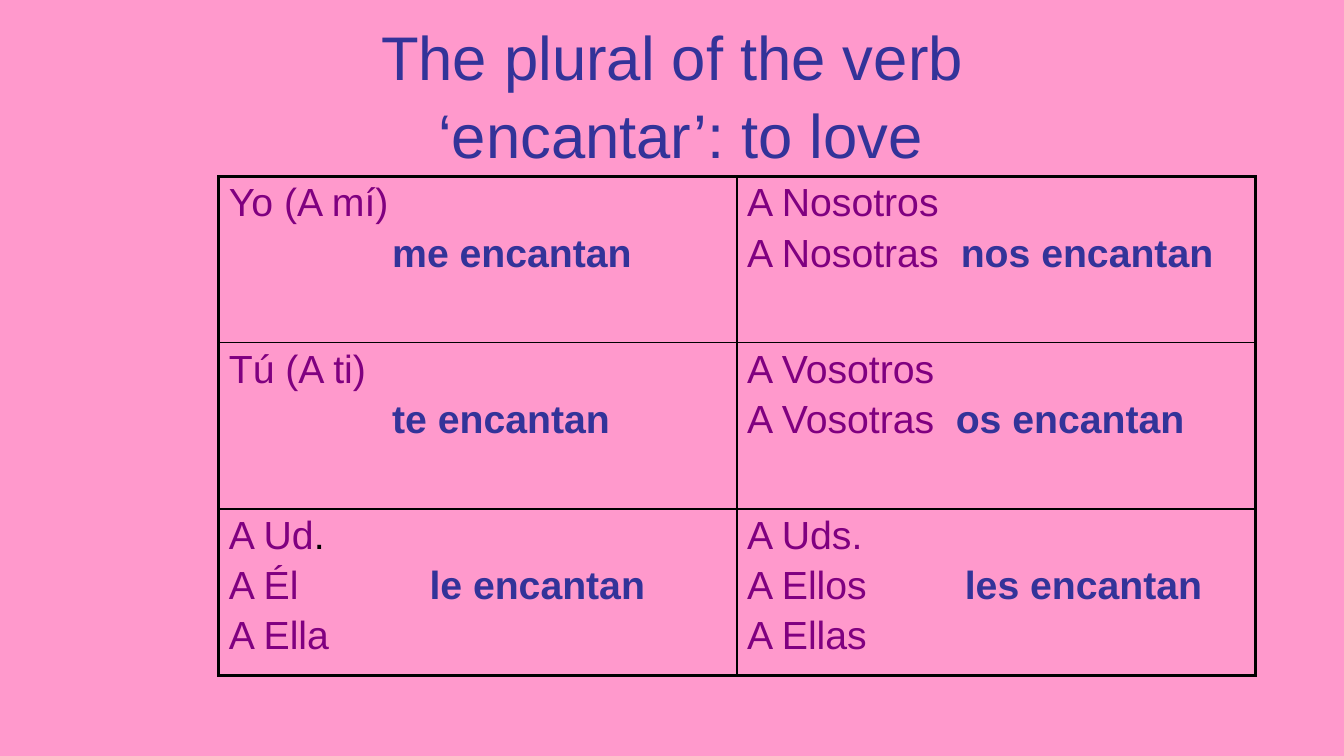
from pptx import Presentation, util as u
from pptx.dml.color import RGBColor
from pptx.enum import text
from pptx.oxml import ns, xmlchemy as x

PINK = RGBColor(0xFF, 0x99, 0xCC)
NAVY = RGBColor(0x33, 0x33, 0x99)
PURPLE = RGBColor(0x80, 0x00, 0x80)
BLACK = RGBColor(0x00, 0x00, 0x00)
OUTER, INNER = u.Pt(2.25), u.Pt(1)

# Each cell lists its lines; each line lists (text, colour, bold) runs.
# The number is the tab stop of the verb, in inches.
CELLS = [
    [(1.62, [[("Yo (A mí)", PURPLE, False)],
             [("\t", BLACK, False), ("me encantan", NAVY, True)]]),
     (2.12, [[("A Nosotros", PURPLE, False)],
             [("A Nosotras\t", PURPLE, False), ("nos encantan", NAVY, True)]])],
    [(1.62, [[("Tú (A ti)", PURPLE, False)],
             [("\t", BLACK, False), ("te encantan", NAVY, True)]]),
     (2.07, [[("A Vosotros", PURPLE, False)],
             [("A Vosotras\t", PURPLE, False), ("os encantan", NAVY, True)]])],
    [(1.99, [[("A Ud", PURPLE, False), (".", BLACK, False)],
             [("A Él\t", PURPLE, False), ("le encantan", NAVY, True)],
             [("A Ella", PURPLE, False)]]),
     (2.16, [[("A Uds.", PURPLE, False)],
             [("A Ellos\t", PURPLE, False), ("les encantan", NAVY, True)],
             [("A Ellas", PURPLE, False)]])],
]


def add_text(p, content, size=28, color=PURPLE, bold=False, font="Arial"):
    r = p.add_run()
    r.text = content
    r.font.name, r.font.size, r.font.bold = font, u.Pt(size), bold
    r.font.color.rgb = color


def add_element(parent, tag, **attributes):
    element = x.OxmlElement(tag)
    for name, value in attributes.items():
        element.set(name, str(value))
    parent.append(element)
    return element


class SlideBuilder:
    def __init__(self, prs):
        self.s = prs.slides.add_slide(prs.slide_layouts[5])
        self.s.background.fill.solid()
        self.s.background.fill.fore_color.rgb = PINK

    def title(self, lines, left, top, width, height):
        sp = self.s.shapes.title
        sp.left, sp.top = u.Inches(left), u.Inches(top)
        sp.width, sp.height = u.Inches(width), u.Inches(height)
        tf = sp.text_frame
        tf.word_wrap = True
        tf.auto_size = text.MSO_AUTO_SIZE.NONE
        tf.vertical_anchor = text.MSO_ANCHOR.MIDDLE
        p = tf.paragraphs[0]
        p.alignment = text.PP_ALIGN.CENTER
        p.line_spacing = 1.05
        for i, line in enumerate(lines):
            if i:
                p.add_line_break()
            add_text(p, line, size=44, color=NAVY)

    def table(self, cells, left, top, col_width, row_height):
        rows, cols = len(cells), len(cells[0])
        table = self.s.shapes.add_table(
            rows, cols, u.Inches(left), u.Inches(top),
            u.Inches(cols * col_width), u.Inches(rows * row_height)).table
        table.first_row = table.horz_banding = False
        for column in table.columns:
            column.width = u.Inches(col_width)
        for i, row in enumerate(cells):
            table.rows[i].height = u.Inches(row_height)
            for j, (stop, lines) in enumerate(row):
                cell = table.cell(i, j)
                outer = {"L": j == 0, "R": j == cols - 1,
                         "T": i == 0, "B": i == rows - 1}
                self.borders(cell, outer)
                cell.fill.background()
                self.cell_lines(cell.text_frame, lines, stop)

    def borders(self, cell, outer):
        """Draw black edges, heavier on the sides flagged as outer."""
        tcPr = cell._tc.get_or_add_tcPr()
        for side, is_outer in outer.items():
            ln = add_element(tcPr, f"a:ln{side}", w=OUTER if is_outer else INNER)
            add_element(add_element(ln, "a:solidFill"), "a:srgbClr", val=BLACK)

    def cell_lines(self, tf, lines, stop):
        for i, runs in enumerate(lines):
            p = tf.add_paragraph() if i else tf.paragraphs[0]
            tabs = add_element(p._p.get_or_add_pPr(), "a:tabLst")
            add_element(tabs, "a:tab", pos=u.Inches(stop), algn="l")
            if i:
                p.space_before = u.Pt(4.6)
            for content, color, bold in runs:
                add_text(p, content, color=color, bold=bold)


def main():
    prs = Presentation()
    prs.slide_width, prs.slide_height = u.Inches(13.33), u.Inches(7.5)
    slide = SlideBuilder(prs)
    slide.title(["The plural of the verb", " ‘encantar’: to love"],
                0.67, 0.3, 12, 1.25)
    slide.table(CELLS, 2.17, 1.75, col_width=5.14, row_height=1.65)
    prs.save("out.pptx")


if __name__ == "__main__":
    main()
